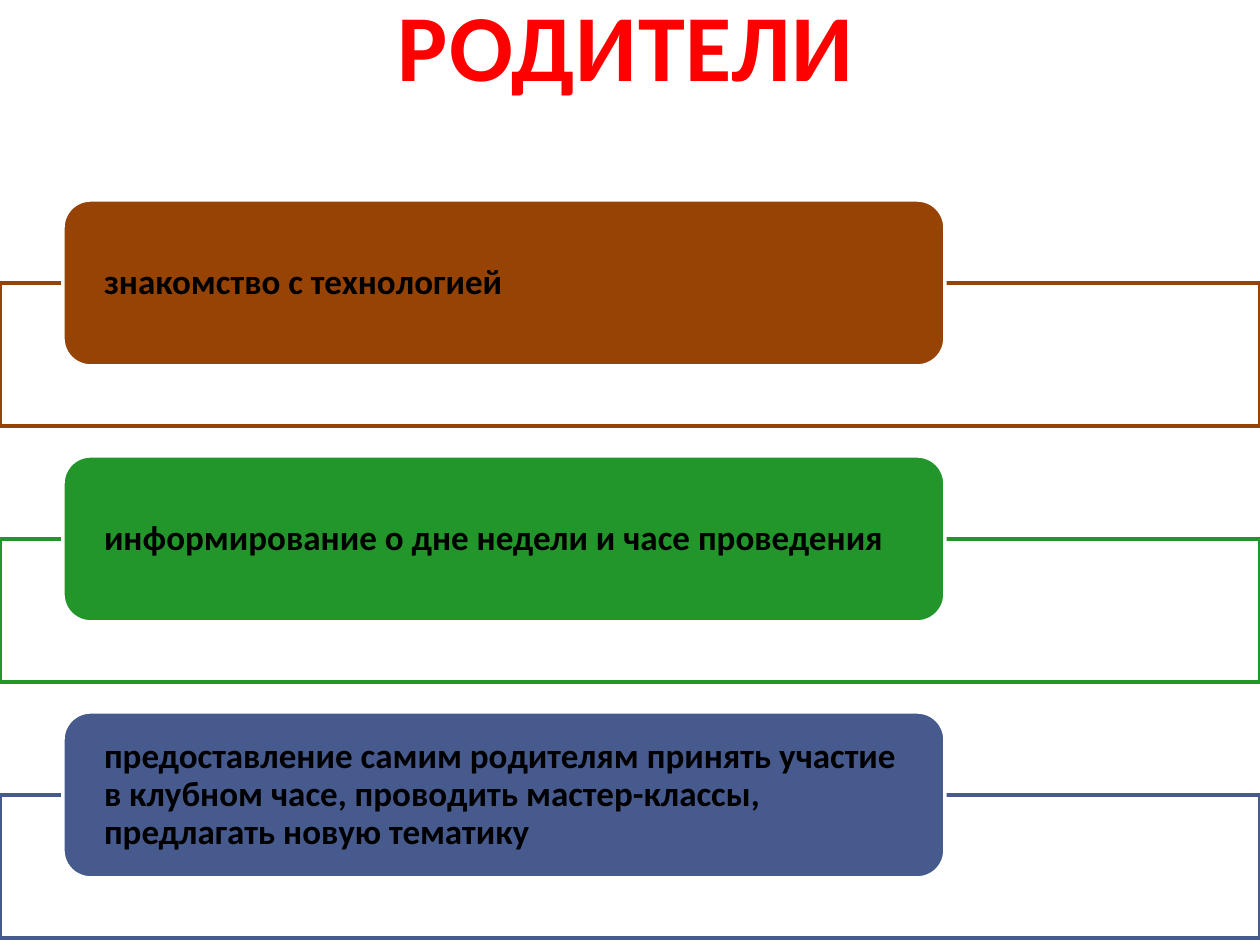
from dataclasses import dataclass

from pptx import Presentation
from pptx.dml.color import RGBColor as Color
from pptx.enum.shapes import MSO_SHAPE as Shape
from pptx.enum.text import MSO_ANCHOR as Anchor, PP_ALIGN as Align
from pptx.util import Pt

EMU_PER_PX = 914400 / 126


def px(length):
    return round(length * EMU_PER_PX)


@dataclass(frozen=True)
class Theme:
    font: str = "Calibri"
    title_color: str = "FF0000"
    text_color: str = "000000"
    paper: str = "FFFFFF"
    title_size: int = 54
    text_size: int = 20
    line_width: int = 2


class SlideBuilder:
    def __init__(self, slide, theme):
        self.slide = slide
        self.theme = theme

    def add_text(self, frame, text, size, color, align, anchor, side_margin):
        frame.word_wrap = True
        frame.vertical_anchor = anchor
        frame.margin_left = frame.margin_right = px(side_margin)
        frame.margin_top = frame.margin_bottom = 0
        para = frame.paragraphs[0]
        para.alignment = align
        para.line_spacing = 0.9
        span = para.add_run()
        span.text = text
        span.font.name = self.theme.font
        span.font.size = Pt(size)
        span.font.bold = True
        span.font.color.rgb = Color.from_string(color)
        return span

    def title(self, text, left, top, width, height):
        box = self.slide.shapes.title
        box.left, box.top, box.width, box.height = map(px, (left, top, width, height))
        span = self.add_text(box.text_frame, text, self.theme.title_size,
                             self.theme.title_color, Align.CENTER, Anchor.TOP, 12)
        # Letter spacing in hundredths of a point
        span.font._element.set("spc", "50")

    def panel(self, kind, left, top, width, height, fill, line):
        box = self.slide.shapes.add_shape(kind, *map(px, (left, top, width, height)))
        box.shadow.inherit = False
        box.fill.solid()
        box.fill.fore_color.rgb = Color.from_string(fill)
        box.line.color.rgb = Color.from_string(line)
        box.line.width = Pt(self.theme.line_width)
        return box

    def step(self, text, top, color):
        paper = self.theme.paper
        self.panel(Shape.RECTANGLE, 0, top + 83, 1260, 143, paper, color)
        card = self.panel(Shape.ROUNDED_RECTANGLE, 63, top, 882, 166, color, paper)
        self.add_text(card.text_frame, text, self.theme.text_size,
                      self.theme.text_color, Align.LEFT, Anchor.MIDDLE, 33)


def main():
    deck = Presentation()
    deck.slide_width, deck.slide_height = px(1260), px(945)
    page = SlideBuilder(deck.slides.add_slide(deck.slide_layouts[5]), Theme())

    # Heading
    page.title("РОДИТЕЛИ", 59, 0, 1134, 195)

    # Steps of working with parents, at an equal pitch
    steps = [
        ("знакомство с технологией", "964305"),
        ("информирование о дне недели и часе проведения", "22962B"),
        ("предоставление самим родителям принять участие в клубном часе, "
         "проводить мастер-классы, предлагать новую тематику", "475A8D"),
    ]
    for index, (text, color) in enumerate(steps):
        page.step(text, 200 + 256 * index, color)

    deck.save("out.pptx")


if __name__ == "__main__":
    main()
